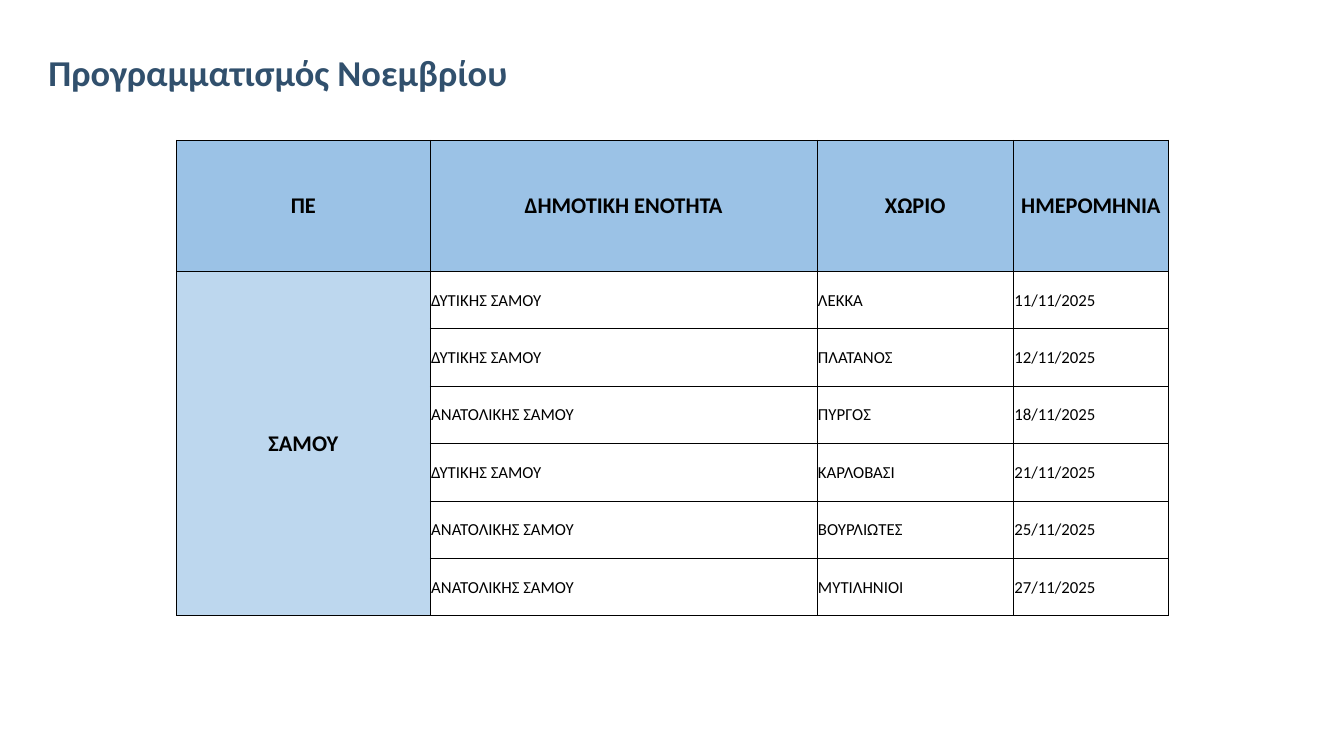
from dataclasses import dataclass

from lxml.etree import SubElement
from pptx import Presentation
from pptx.dml.color import RGBColor
from pptx.enum.text import MSO_ANCHOR as Anchor, PP_ALIGN as Align
from pptx.oxml.ns import qn
from pptx.util import Inches, Pt


@dataclass(frozen=True)
class Theme:
    font: str = "Calibri"
    title: str = "31506D"
    text: str = "000000"
    border: str = "000000"
    header_fill: str = "9BC2E6"
    region_fill: str = "BDD7EE"
    body_fill: str = "FFFFFF"
    title_size: int = 26
    header_size: int = 16
    body_size: int = 12
    border_width: float = 0.5


THEME = Theme()
TITLE = "Προγραμματισμός Νοεμβρίου"
HEADERS = ["ΠΕ", "ΔΗΜΟΤΙΚΗ ΕΝΟΤΗΤΑ", "ΧΩΡΙΟ", "ΗΜΕΡΟΜΗΝΙΑ"]
REGION = "ΣΑΜΟΥ"
VISITS = [
    ("ΔΥΤΙΚΗΣ ΣΑΜΟΥ", "ΛΕΚΚΑ", "11/11/2025"),
    ("ΔΥΤΙΚΗΣ ΣΑΜΟΥ", "ΠΛΑΤΑΝΟΣ", "12/11/2025"),
    ("ΑΝΑΤΟΛΙΚΗΣ ΣΑΜΟΥ", "ΠΥΡΓΟΣ", "18/11/2025"),
    ("ΔΥΤΙΚΗΣ ΣΑΜΟΥ", "ΚΑΡΛΟΒΑΣΙ", "21/11/2025"),
    ("ΑΝΑΤΟΛΙΚΗΣ ΣΑΜΟΥ", "ΒΟΥΡΛΙΩΤΕΣ", "25/11/2025"),
    ("ΑΝΑΤΟΛΙΚΗΣ ΣΑΜΟΥ", "ΜΥΤΙΛΗΝΙΟΙ", "27/11/2025"),
]
COLUMN_WIDTHS = [2.52, 3.84, 1.95, 1.54]
HEADER_HEIGHT = 1.3


def set_text(tf, text, size, color, bold):
    tf.text = text
    font = tf.paragraphs[0].runs[0].font
    font.name, font.size, font.bold = THEME.font, Pt(size), bold
    font.color.rgb = RGBColor.from_string(color)


def add_borders(cell):
    """Draw all four sides; must run before the cell's fill is set."""
    tc_pr = cell._tc.get_or_add_tcPr()
    for side in ("lnL", "lnR", "lnT", "lnB"):
        ln = SubElement(tc_pr, qn(f"a:{side}"), w=str(Pt(THEME.border_width)))
        fill = SubElement(ln, qn("a:solidFill"))
        SubElement(fill, qn("a:srgbClr"), val=THEME.border)


def style_cell(cell, fill):
    add_borders(cell)
    cell.fill.solid()
    cell.fill.fore_color.rgb = RGBColor.from_string(fill)
    cell.vertical_anchor = Anchor.MIDDLE
    cell.margin_left = cell.margin_right = cell.margin_top = Inches(0.01)
    cell.margin_bottom = 0


def fill_heading(cell, text):
    set_text(cell.text_frame, text, THEME.header_size, THEME.text, True)
    cell.text_frame.paragraphs[0].alignment = Align.CENTER


def add_title(slide, left, top, width, height):
    sp = slide.shapes.add_textbox(*map(Inches, (left, top, width, height)))
    tf = sp.text_frame
    tf.word_wrap = True
    tf.vertical_anchor = Anchor.BOTTOM
    tf.margin_left = Inches(0.12)
    set_text(tf, TITLE, THEME.title_size, THEME.title, True)
    tf.paragraphs[0].line_spacing = 0.9


def add_schedule(slide, left, top, width, height):
    frame = slide.shapes.add_table(len(VISITS) + 1, len(HEADERS),
                                   *map(Inches, (left, top, width, height)))
    table = frame.table
    table.first_row = table.horz_banding = False
    for column, share in zip(table.columns, COLUMN_WIDTHS):
        column.width = Inches(width * share / sum(COLUMN_WIDTHS))
    body_height = (height - HEADER_HEIGHT) / len(VISITS)
    for i, row in enumerate(table.rows):
        row.height = Inches(body_height if i else HEADER_HEIGHT)

    for col, header in enumerate(HEADERS):
        style_cell(table.cell(0, col), THEME.header_fill)
        fill_heading(table.cell(0, col), header)
    for row, visit in enumerate(VISITS, 1):
        style_cell(table.cell(row, 0), THEME.region_fill)
        for col, text in enumerate(visit, 1):
            cell = table.cell(row, col)
            style_cell(cell, THEME.body_fill)
            set_text(cell.text_frame, text, THEME.body_size, THEME.text, False)
    table.cell(1, 0).merge(table.cell(len(VISITS), 0))
    fill_heading(table.cell(1, 0), REGION)


def main():
    prs = Presentation()
    prs.slide_width, prs.slide_height = Inches(13.33), Inches(7.5)
    slide = prs.slides.add_slide(prs.slide_layouts[6])
    add_title(slide, 0.36, 0.25, 12.4, 0.74)
    add_schedule(slide, 1.75, 1.39, 9.84, 4.72)
    prs.save("out.pptx")


if __name__ == "__main__":
    main()
